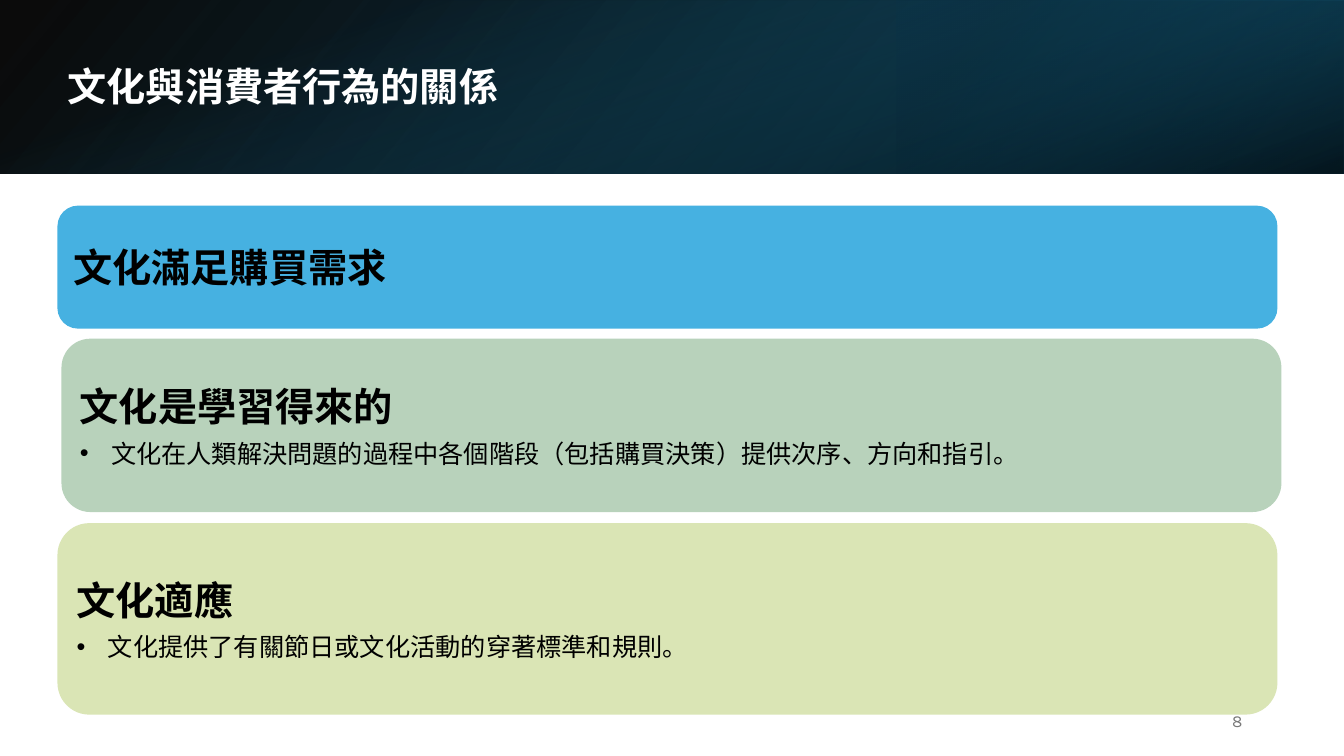
from lxml import etree
from pptx import Presentation
from pptx.dml.color import RGBColor
from pptx.enum.shapes import MSO_SHAPE
from pptx.enum.text import MSO_ANCHOR, MSO_AUTO_SIZE, PP_ALIGN
from pptx.oxml.ns import qn
from pptx.util import Inches, Pt

RECT, ROUND = MSO_SHAPE.RECTANGLE, MSO_SHAPE.ROUNDED_RECTANGLE
MIDDLE, NO_FIT = MSO_ANCHOR.MIDDLE, MSO_AUTO_SIZE.NONE
LEFT, RIGHT = PP_ALIGN.LEFT, PP_ALIGN.RIGHT

FONT = "Karla"
COLORS = {
    "white": "FFFFFF",
    "black": "000000",
    "gray": "797979",
    "navy": "104862",
    "deep": "0B3041",
    "teal": "156082",
    "blue": "46B1E1",
    "sage": "B8D2BB",
    "lime": "DAE5B5",
}
BANDS = [
    ((0, 0, 13.33, 1.72), 0, True, 140, [(0, "black", 96), (100, "navy", 100)]),
    ((8.89, 0, 4.44, 1.72), 180, True, 320, [(19, "deep", 68), (100, "teal", 79)]),
    ((5.8, -5.8, 1.72, 13.33), 90, False, 340, [(23, "teal", 0), (99, "black", 74)]),
]
CARDS = [
    ((0.57, 2.04, 12.1, 1.22), "blue", "文化滿足購買需求", None),
    ((0.61, 3.36, 12.1, 1.72), "sage", "文化是學習得來的",
     "文化在人類解決問題的過程中各個階段（包括購買決策）提供次序、方向和指引。"),
    ((0.57, 5.19, 12.1, 1.9), "lime", "文化適應",
     "文化提供了有關節日或文化活動的穿著標準和規則。"),
]


def color(name):
    return RGBColor.from_string(COLORS[name])


def add_run(para, text, size, ink, bold=False):
    run = para.add_run()
    run.text = text
    font = run.font
    font.name, font.size, font.bold = FONT, Pt(size), bold
    font.color.rgb = color(ink)


def add_shape(slide, kind, box):
    shape = slide.shapes.add_shape(kind, *map(Inches, box))
    shape.shadow.inherit = False
    shape.line.fill.background()
    return shape


def add_band(slide, box, turn, flip, angle, stops):
    band = add_shape(slide, RECT, box)
    band.rotation = turn
    props = band._element.spPr
    if flip:
        props.find(qn("a:xfrm")).set("flipH", "1")
    grad = etree.Element(qn("a:gradFill"), rotWithShape="1")
    items = etree.SubElement(grad, qn("a:gsLst"))
    for pos, name, alpha in stops:
        stop = etree.SubElement(items, qn("a:gs"), pos=str(pos * 1000))
        tint = etree.SubElement(stop, qn("a:srgbClr"), val=COLORS[name])
        etree.SubElement(tint, qn("a:alpha"), val=str(alpha * 1000))
    etree.SubElement(grad, qn("a:lin"), ang=str(angle * 60000), scaled="0")
    props.find(qn("a:prstGeom")).addnext(grad)


def set_title(slide, text):
    title = slide.shapes.title
    title.left, title.top = Inches(0.57), Inches(0.4)
    title.width, title.height = Inches(12.23), Inches(0.96)
    slide.shapes._spTree.append(title._element)
    frame = title.text_frame
    frame.auto_size = NO_FIT
    frame.vertical_anchor = MIDDLE
    para = frame.paragraphs[0]
    para.alignment = LEFT
    para.line_spacing = 0.9
    para.space_after = Pt(6)
    add_run(para, text, 28, "white", True)


def add_number(slide, text):
    box = slide.shapes.add_textbox(Inches(9.42), Inches(6.95), Inches(3), Inches(0.4))
    frame = box.text_frame
    frame.word_wrap = True
    frame.vertical_anchor = MIDDLE
    para = frame.paragraphs[0]
    para.alignment = RIGHT
    add_run(para, text, 12, "gray")


def add_bullet(para):
    props = para._p.get_or_add_pPr()
    indent = Inches(0.31)
    props.set("marL", str(indent))
    props.set("indent", str(-indent))
    etree.SubElement(props, qn("a:buFont"), typeface="Arial")
    etree.SubElement(props, qn("a:buChar"), char="•")


def add_card(slide, box, fill, head, note):
    card = add_shape(slide, ROUND, box)
    card.fill.solid()
    card.fill.fore_color.rgb = color(fill)
    frame = card.text_frame
    frame.word_wrap = True
    frame.vertical_anchor = MIDDLE
    para = frame.paragraphs[0]
    para.alignment = LEFT
    add_run(para, head, 28, "black", True)
    if note:
        para.space_after = Pt(6)
        para = frame.add_paragraph()
        add_bullet(para)
        para.alignment = LEFT
        para.space_after = Pt(6)
        add_run(para, note, 18, "black")


def main():
    deck = Presentation()
    deck.slide_width, deck.slide_height = Inches(13.33), Inches(7.5)
    slide = deck.slides.add_slide(deck.slide_layouts[5])
    for band in BANDS:
        add_band(slide, *band)
    set_title(slide, "文化與消費者行為的關係")
    add_number(slide, "8")
    for card in CARDS:
        add_card(slide, *card)
    deck.save("out.pptx")


if __name__ == "__main__":
    main()
